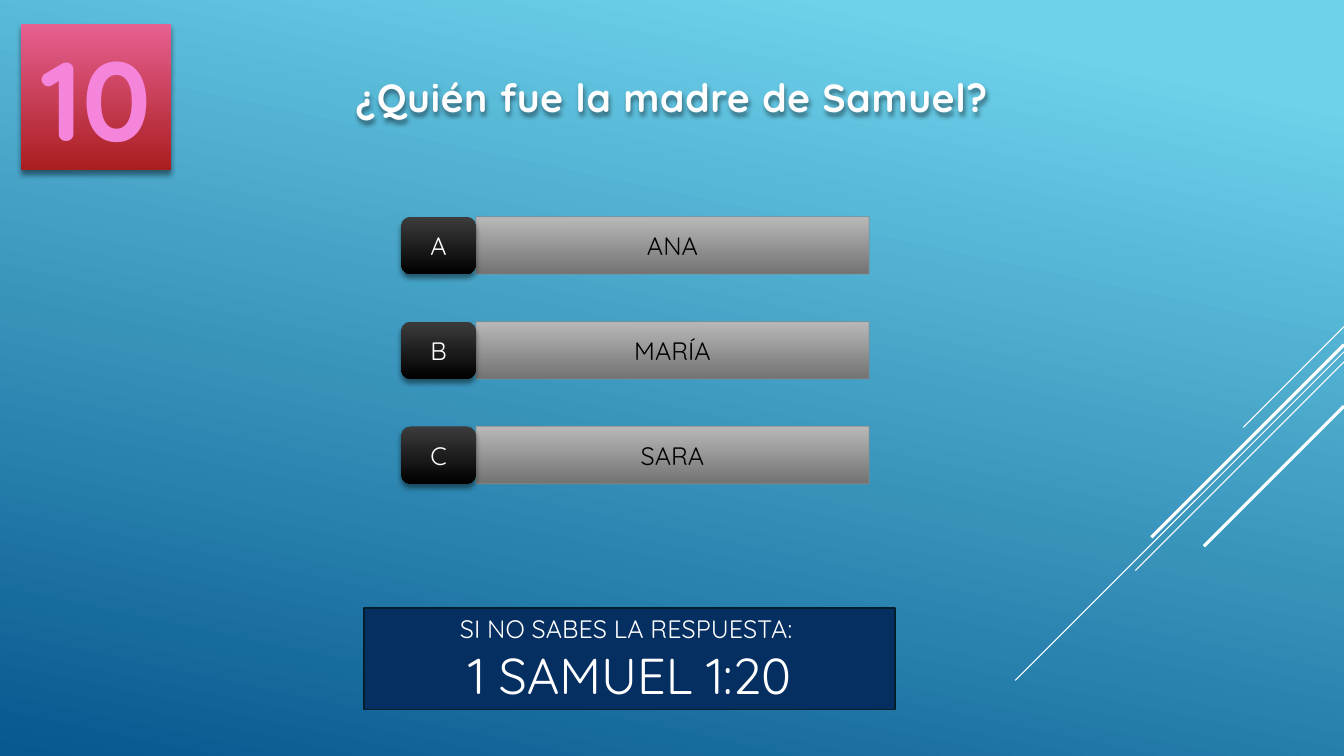
from lxml.etree import SubElement
from pptx import Presentation
from pptx.dml.color import RGBColor
from pptx.enum.shapes import MSO_CONNECTOR, MSO_SHAPE
from pptx.enum.text import MSO_ANCHOR, MSO_AUTO_SIZE, PP_ALIGN
from pptx.oxml.ns import qn
from pptx.util import Inches, Pt

WIDE, HIGH = 13.33, 7.5
FONT = "Quicksand"
WHITE = RGBColor(0xFF, 0xFF, 0xFF)
BLACK = RGBColor(0x00, 0x00, 0x00)
PALE = RGBColor(0xFE, 0xFE, 0xFE)
SKY = RGBColor(0x6E, 0xD2, 0xEB)
SEA = RGBColor(0x06, 0x58, 0x8E)
SILVER = RGBColor(0xB8, 0xB8, 0xB8)
GREY = RGBColor(0x73, 0x73, 0x73)
EDGE = RGBColor(0x89, 0x89, 0x89)
COAL = RGBColor(0x3C, 0x3C, 0x3C)
NAVY = RGBColor(0x05, 0x2F, 0x61)
INK = RGBColor(0x02, 0x1E, 0x2B)
ROSE = RGBColor(0xE6, 0x60, 0x91)
RED = RGBColor(0xAA, 0x1E, 0x1F)
PINK = RGBColor(0xF5, 0x85, 0xDB)


def blend(fill, first, last, angle=90, start=0):
    """Fill with a gradient whose angle runs clockwise."""
    fill.gradient()
    fill.gradient_angle = 360 - angle
    for stop, color, place in zip(fill.gradient_stops, (first, last), (start, 1)):
        stop.color.rgb = color
        stop.position = place


def shade(shape, blur=4, drop=3, alpha=46):
    """Drop a soft black shadow straight below a shape."""
    shape.shadow.inherit = False
    effects = shape._element.spPr.find(qn("a:effectLst"))
    outer = SubElement(effects, qn("a:outerShdw"), blurRad=str(Pt(blur)),
                       dist=str(Pt(drop)), dir="5400000", algn="ctr", rotWithShape="0")
    color = SubElement(outer, qn("a:srgbClr"), val=str(BLACK))
    SubElement(color, qn("a:alpha"), val=str(alpha * 1000))


def write(shape, text, sizes, color, bold=False, anchor=MSO_ANCHOR.MIDDLE):
    """Set centred text with one size for each paragraph."""
    frame = shape.text_frame
    frame.text = text
    frame.word_wrap = True
    frame.auto_size = MSO_AUTO_SIZE.NONE
    frame.vertical_anchor = anchor
    for para, size in zip(frame.paragraphs, sizes):
        para.alignment = PP_ALIGN.CENTER
        font = para.runs[0].font
        font.name, font.size, font.bold = FONT, Pt(size), bold
        font.color.rgb = color


def block(slide, box, kind=MSO_SHAPE.RECTANGLE):
    """Add a plain shape without line or shadow."""
    shape = slide.shapes.add_shape(kind, *map(Inches, box))
    shape.shadow.inherit = False
    shape.line.fill.background()
    return shape


def rays(slide):
    """Draw diagonal rays that start at the right edge."""
    for top, run, weight in ((3.24, 1, 0.75), (3.49, 3.26, 0.75), (3.59, 2.07, 0.75),
                             (3.42, 1.91, 2.25), (4.03, 1.39, 2.25)):
        ends = WIDE, top, WIDE - run, top + run
        ray = slide.shapes.add_connector(MSO_CONNECTOR.STRAIGHT, *map(Inches, ends))
        ray.line.color.rgb = WHITE
        ray.line.width = Pt(weight)
        SubElement(ray._element.spPr, qn("a:effectLst"))


def header(slide, box, text):
    """Place the question in the title placeholder."""
    title = slide.shapes.title
    title.left, title.top, title.width, title.height = map(Inches, box)
    write(title, text, [28], PALE, True, MSO_ANCHOR.TOP)
    title.text_frame.paragraphs[0].runs[0].font._element.set("spc", "50")
    shade(title, 3, 2)


def badge(slide, box, text):
    """Place the question number."""
    shape = block(slide, box)
    blend(shape.fill, ROSE, RED)
    shade(shape)
    write(shape, text, [80], PINK, True, MSO_ANCHOR.TOP)


def choices(slide, box, names):
    """Stack lettered answers evenly in a box."""
    left, top, width, height = box
    row, key = 0.57, 0.74
    step = (height - row) / (len(names) - 1)
    for index, name in enumerate(names):
        y = top + index * step
        bar = block(slide, (left + key, y, width - key, row))
        blend(bar.fill, SILVER, GREY)
        bar.line.color.rgb = EDGE
        bar.line.width = Pt(0.75)
        tint = bar.line._ln.find(".//" + qn("a:srgbClr"))
        SubElement(tint, qn("a:alpha"), val="60000")
        write(bar, name, [18], BLACK)
        tile = block(slide, (left, y, key, row), MSO_SHAPE.ROUNDED_RECTANGLE)
        blend(tile.fill, COAL, BLACK)
        shade(tile)
        write(tile, "ABC"[index], [18], WHITE)


def hint(slide, box, text):
    """Place the panel with the Bible passage."""
    panel = block(slide, box)
    panel.fill.solid()
    panel.fill.fore_color.rgb = NAVY
    panel.line.color.rgb = INK
    panel.line.width = Pt(1.25)
    write(panel, text, [18, 36], WHITE)


def main():
    """Build and save the quiz slide."""
    deck = Presentation()
    deck.slide_width, deck.slide_height = Inches(WIDE), Inches(HIGH)
    slide = deck.slides.add_slide(deck.slide_layouts[5])
    blend(slide.background.fill, SKY, SEA, 102, 0.1)
    rays(slide)
    header(slide, (1.51, 0.68, 10.31, 0.57), "¿Quién fue la madre de Samuel?")
    choices(slide, (3.98, 2.15, 4.64, 2.65), ("ANA", "MARÍA", "SARA"))
    hint(slide, (3.61, 6.03, 5.27, 1.01), "SI NO SABES LA RESPUESTA: \n1 SAMUEL 1:20")
    badge(slide, (0.21, 0.24, 1.49, 1.45), "10")
    deck.save("out.pptx")


if __name__ == "__main__":
    main()
